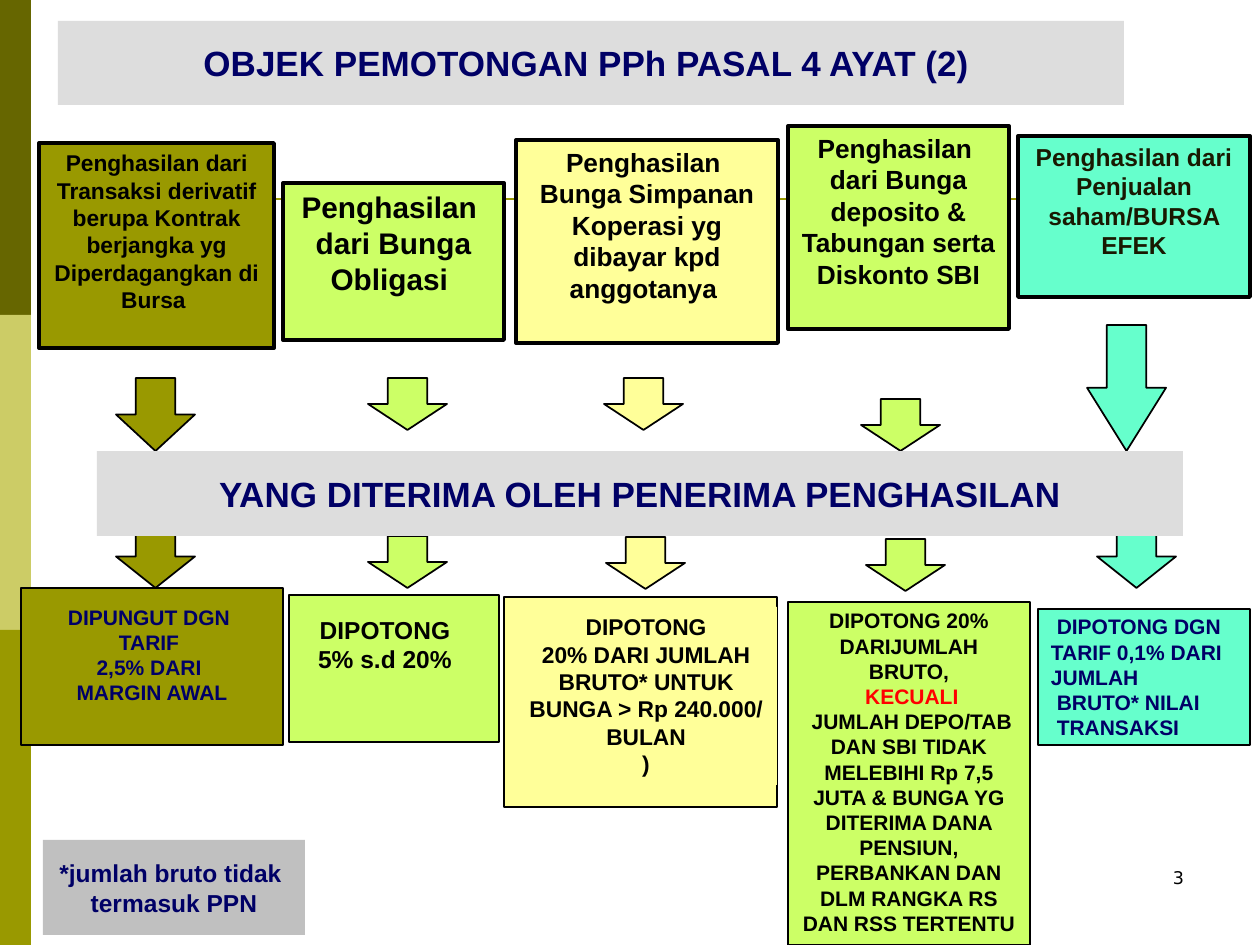
from pptx import Presentation
from pptx.dml.color import RGBColor
from pptx.enum.shapes import MSO_CONNECTOR, MSO_SHAPE
from pptx.enum.text import MSO_ANCHOR, PP_ALIGN
from pptx.oxml.ns import qn
from pptx.util import Pt
from lxml import etree

SCALE = 914400 / 126
RECTANGLE, DOWN_ARROW = MSO_SHAPE.RECTANGLE, MSO_SHAPE.DOWN_ARROW
STRAIGHT = MSO_CONNECTOR.STRAIGHT
TOP, MIDDLE = MSO_ANCHOR.TOP, MSO_ANCHOR.MIDDLE
LEFT, CENTER, RIGHT = PP_ALIGN.LEFT, PP_ALIGN.CENTER, PP_ALIGN.RIGHT
TITLE_ONLY = 5

COLORS = {
    "black": "000000", "navy": "000066", "red": "FF0000", "ink": "191901",
    "dark_olive": "666600", "pale_olive": "CCCC66", "olive": "999900",
    "lime": "CCFF66", "yellow": "FFFF99", "mint": "66FFCC",
    "banner": "DDDDDD", "gray": "C0C0C0",
}

SOURCES = [
    ((39, 143, 235, 205), "olive", 13, "black",
     ["Penghasilan dari Transaksi derivatif berupa Kontrak berjangka yg Diperdagangkan di Bursa "]),
    ((283, 183, 221, 157), "lime", 17, "black", ["Penghasilan ", "dari Bunga Obligasi "]),
    ((516, 140, 262, 203), "yellow", 15, "black",
     ["Penghasilan ", "Bunga Simpanan Koperasi yg dibayar kpd anggotanya "]),
    ((788, 126, 221, 203), "lime", 15, "black",
     ["Penghasilan ", "dari Bunga deposito &", "Tabungan serta Diskonto SBI"]),
    ((1018, 136, 232, 161), "mint", 14, "ink",
     ["Penghasilan dari", "Penjualan saham/BURSA EFEK"]),
]

ARROWS = [
    (116, 378, 73, "olive", 0.5), (368, 378, 52, "lime", 0.5),
    (604, 378, 52, "yellow", 0.5), (861, 399, 52, "lime", 0.5),
    (1087, 325, 126, "mint", 0.8),
    (116, 525, 63, "olive", 0.5), (368, 536, 52, "lime", 0.5),
    (606, 537, 52, "yellow", 0.5), (866, 539, 52, "lime", 0.5),
    (1097, 525, 63, "mint", 0.5),
]


def px(length):
    return round(length * SCALE)


def rgb(name):
    return RGBColor.from_string(COLORS[name])


def write(shape, lines, size=12, color="navy", bold=True, font="Arial",
          align=CENTER, anchor=TOP, bottom=6):
    frame = shape.text_frame
    frame.word_wrap = True
    frame.vertical_anchor = anchor
    frame.margin_left = frame.margin_right = px(13)
    frame.margin_top, frame.margin_bottom = px(6), px(bottom)
    for index, line in enumerate(lines):
        text, line_color = line if isinstance(line, tuple) else (line, color)
        para = frame.paragraphs[0] if index == 0 else frame.add_paragraph()
        para.alignment = align
        span = para.add_run()
        span.text = text
        span.font.size = Pt(size)
        span.font.bold = bold
        span.font.name = font
        span.font.color.rgb = rgb(line_color)


def add_block(page, area, fill, border=None, kind=RECTANGLE):
    box = page.shapes.add_shape(kind, *map(px, area))
    box.shadow.inherit = False
    box.fill.solid()
    box.fill.fore_color.rgb = rgb(fill)
    if border:
        box.line.color.rgb = rgb("black")
        box.line.width = Pt(border)
    else:
        box.line.fill.background()
    return box


def add_text(page, area, lines, **style):
    write(page.shapes.add_textbox(*map(px, area)), lines, **style)


def add_arrow(page, left, top, height, fill, head):
    arrow = add_block(page, (left, top, 79, height), fill, 1, DOWN_ARROW)
    arrow.adjustments[0] = 0.5
    arrow.adjustments[1] = head


def add_rule(page, left, right, top):
    rule = page.shapes.add_connector(STRAIGHT, px(left), px(top), px(right), px(top))
    rule.line.color.rgb = rgb("olive")
    rule.line.width = Pt(1.5)
    etree.SubElement(rule._element.spPr, qn("a:effectLst"))


def add_title(page, text):
    title = page.shapes.title
    title.left, title.top, title.width, title.height = map(px, (58, 21, 1066, 84))
    title.fill.solid()
    title.fill.fore_color.rgb = rgb("banner")
    write(title, [text], size=20, anchor=MIDDLE)


def add_results(page):
    write(add_block(page, (21, 588, 262, 157), "olive", 1),
          ["DIPUNGUT DGN ", "TARIF ", "2,5% DARI ", "MARGIN AWAL"],
          anchor=MIDDLE, bottom=30)
    add_block(page, (289, 595, 210, 147), "lime", 1)
    add_text(page, (280, 609, 210, 102), ["DIPOTONG", "5% s.d 20%"], size=14, color="black")
    add_block(page, (504, 597, 273, 210), "yellow", 1)
    write(add_block(page, (515, 607, 262, 178), "yellow"),
          ["DIPOTONG", "20% DARI JUMLAH", "BRUTO* UNTUK", "BUNGA > Rp 240.000/", "BULAN", ")"],
          size=13, color="black")
    write(add_block(page, (788, 602, 242, 343), "lime", 0.75),
          ["DIPOTONG 20% DARIJUMLAH BRUTO,", (" KECUALI", "red"),
           " JUMLAH DEPO/TAB DAN SBI TIDAK MELEBIHI Rp 7,5 JUTA & BUNGA YG DITERIMA "
           "DANA PENSIUN, PERBANKAN DAN DLM RANGKA RS DAN RSS TERTENTU"],
          color="black")
    write(add_block(page, (1038, 609, 212, 136), "mint", 1),
          [" DIPOTONG DGN", "TARIF 0,1% DARI", "JUMLAH", " BRUTO* NILAI", " TRANSAKSI"],
          align=LEFT, anchor=MIDDLE)


def main():
    deck = Presentation()
    deck.slide_width, deck.slide_height = px(1260), px(945)
    page = deck.slides.add_slide(deck.slide_layouts[TITLE_ONLY])

    for index, fill in enumerate(("dark_olive", "pale_olive", "olive")):
        add_block(page, (0, 315 * index, 31, 315), fill)
    add_rule(page, 63, 1176, 199)
    add_title(page, "OBJEK PEMOTONGAN PPh PASAL 4 AYAT (2) ")

    for area, fill, size, color, lines in SOURCES:
        write(add_block(page, area, fill, 2.25), lines, size=size, color=color)
    for arrow in ARROWS:
        add_arrow(page, *arrow)
    write(add_block(page, (97, 451, 1086, 85), "banner"),
          ["YANG DITERIMA OLEH PENERIMA PENGHASILAN"], size=20, anchor=MIDDLE)
    add_results(page)

    write(add_block(page, (43, 840, 262, 95), "gray"),
          ["*jumlah bruto tidak ", "termasuk PPN"], size=14, anchor=MIDDLE)
    add_text(page, (903, 861, 294, 63), ["3"], size=10, color="black",
             bold=False, font="DejaVu Sans", align=RIGHT)
    deck.save("out.pptx")


if __name__ == "__main__":
    main()
